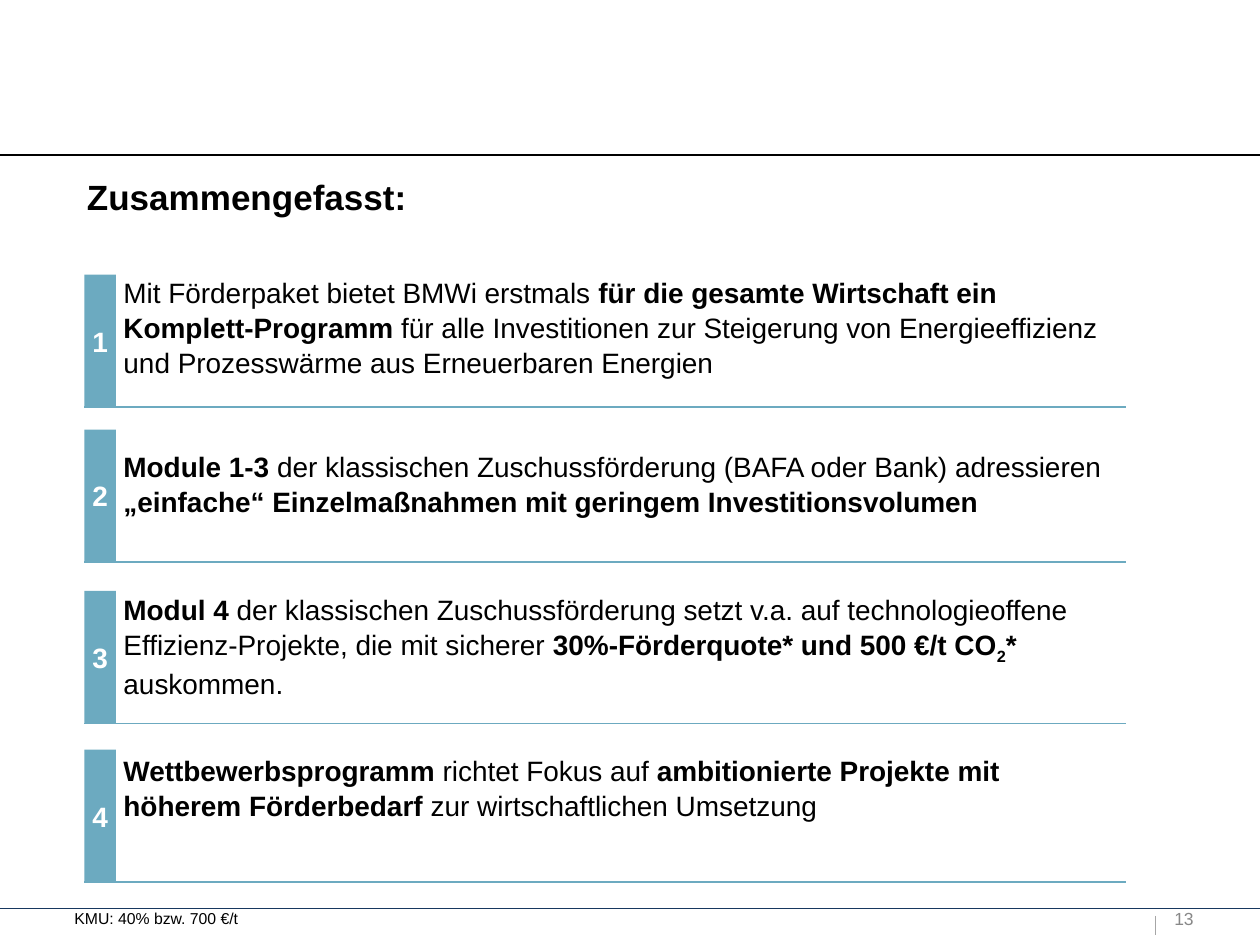
from dataclasses import dataclass

from lxml import etree
from pptx import Presentation
from pptx.dml.color import RGBColor
from pptx.enum.shapes import MSO_CONNECTOR, MSO_SHAPE
from pptx.enum.text import MSO_ANCHOR, MSO_AUTO_SIZE, PP_ALIGN
from pptx.oxml.ns import qn
from pptx.util import Inches, Pt

RECT, STRAIGHT = MSO_SHAPE.RECTANGLE, MSO_CONNECTOR.STRAIGHT
TOP, MIDDLE = MSO_ANCHOR.TOP, MSO_ANCHOR.MIDDLE
LEFT, CENTER = PP_ALIGN.LEFT, PP_ALIGN.CENTER
NO_FIT = MSO_AUTO_SIZE.NONE


@dataclass(frozen=True)
class Theme:
    font: str = "Arial"
    black: str = "000000"
    white: str = "FFFFFF"
    accent: str = "6CAAC0"
    navy: str = "17375E"
    grey: str = "A6A6A6"
    number: str = "888888"
    title_size: int = 20
    body_size: int = 16
    page_size: int = 10
    note_size: int = 9
    line_width: float = 0.75


THEME = Theme()
WIDTH, HEIGHT = 10, 7.5
BAR_LEFT, BAR_WIDTH, BAR_HEIGHT = 0.67, 0.25, 1.05
RULE_RIGHT = 8.94
TEXT_LEFT, TEXT_WIDTH = 0.98, 7.95
MARGIN_LEFT = 0.59
FOOTER_TOP = 7.21
BODY_SPACING = 1.04

# Bar top, text top, text height, runs; ** marks bold text, _ a subscript.
POINTS = [
    (2.18, 2.18, 0.81, [
        "Mit Förderpaket bietet BMWi erstmals ",
        "**für die gesamte Wirtschaft ein Komplett-Programm",
        " für alle Investitionen zur Steigerung von Energieeffizienz "
        "und Prozesswärme aus Erneuerbaren Energien"]),
    (3.41, 3.56, 0.54, [
        "**Module 1-3 ",
        "der klassischen Zuschussförderung (BAFA oder Bank) adressieren ",
        "**„einfache“ Einzelmaßnahmen mit geringem Investitionsvolumen"]),
    (4.69, 4.69, 0.81, [
        "**Modul 4",
        " der klassischen Zuschussförderung setzt v.a. auf technologieoffene "
        "Effizienz-Projekte, die mit sicherer ",
        "**30%-Förderquote* und 500 €/t CO", "**_2", "*** ", "auskommen."]),
    (5.95, 5.97, 0.54, [
        "**Wettbewerbsprogramm ", "richtet Fokus auf ",
        "**ambitionierte Projekte mit höherem Förderbedarf ",
        "zur wirtschaftlichen Umsetzung"]),
]


def style(font, size, color, bold=False):
    font.name, font.size, font.bold = THEME.font, Pt(size), bold
    font.color.rgb = RGBColor.from_string(color)


def clear_margins(tf):
    tf.margin_left = tf.margin_top = tf.margin_right = tf.margin_bottom = 0


def add_line(s, x1, y1, x2, y2, color):
    line = s.shapes.add_connector(STRAIGHT, *map(Inches, (x1, y1, x2, y2)))
    line.line.color.rgb = RGBColor.from_string(color)
    line.line.width = Pt(THEME.line_width)
    etree.SubElement(line._element.spPr, qn("a:effectLst"))


def add_text(s, left, top, width, height, runs, size, color):
    """Add a text box and return its paragraph; runs use the POINTS marks."""
    box = s.shapes.add_textbox(*map(Inches, (left, top, width, height)))
    tf = box.text_frame
    tf.word_wrap = True
    clear_margins(tf)
    p = tf.paragraphs[0]
    for text in runs:
        bold = text.startswith("**")
        text = text[2:] if bold else text
        r = p.add_run()
        r.text = text.removeprefix("_")
        style(r.font, size, color, bold)
        if text.startswith("_"):
            r.font._element.set("baseline", "-25000")
    return p


def set_title(s, text):
    title = s.shapes.title
    title.left, title.top = Inches(MARGIN_LEFT), Inches(1.34)
    title.width, title.height = Inches(8.9), Inches(0.44)
    tf = title.text_frame
    tf.text = text
    tf.auto_size, tf.vertical_anchor = NO_FIT, TOP
    p = tf.paragraphs[0]
    p.alignment = LEFT
    style(p.runs[0].font, THEME.title_size, THEME.black, True)


def add_number_bar(s, number, top):
    bar = s.shapes.add_shape(
        RECT, *map(Inches, (BAR_LEFT, top, BAR_WIDTH, BAR_HEIGHT)))
    bar.shadow.inherit = False
    bar.fill.solid()
    bar.fill.fore_color.rgb = RGBColor.from_string(THEME.accent)
    bar.line.fill.background()
    tf = bar.text_frame
    tf.text = str(number)
    tf.word_wrap, tf.vertical_anchor = False, MIDDLE
    clear_margins(tf)
    p = tf.paragraphs[0]
    p.alignment = CENTER
    style(p.runs[0].font, THEME.body_size, THEME.white, True)


def add_point(s, number, bar_top, text_top, text_height, runs):
    bottom = bar_top + BAR_HEIGHT
    add_number_bar(s, number, bar_top)
    add_line(s, BAR_LEFT, bottom, RULE_RIGHT, bottom, THEME.accent)
    p = add_text(s, TEXT_LEFT, text_top, TEXT_WIDTH, text_height, runs,
                 THEME.body_size, THEME.black)
    p.line_spacing = BODY_SPACING


def add_frame(s):
    add_line(s, 0, 1.23, WIDTH, 1.23, THEME.black)
    add_line(s, 0, FOOTER_TOP, WIDTH, FOOTER_TOP, THEME.navy)
    add_line(s, 9.17, 7.27, 9.17, 7.42, THEME.grey)
    add_text(s, 9.32, FOOTER_TOP, 0.64, 0.17, ["13"],
             THEME.page_size, THEME.number)
    add_text(s, MARGIN_LEFT, FOOTER_TOP, TEXT_WIDTH, 0.15,
             ["KMU: 40% bzw. 700 €/t"], THEME.note_size, THEME.black)


def main():
    prs = Presentation()
    prs.slide_width, prs.slide_height = Inches(WIDTH), Inches(HEIGHT)
    s = prs.slides.add_slide(prs.slide_layouts[5])
    add_frame(s)
    set_title(s, "Zusammengefasst:")
    for number, point in enumerate(POINTS, 1):
        add_point(s, number, *point)
    prs.save("out.pptx")


if __name__ == "__main__":
    main()
